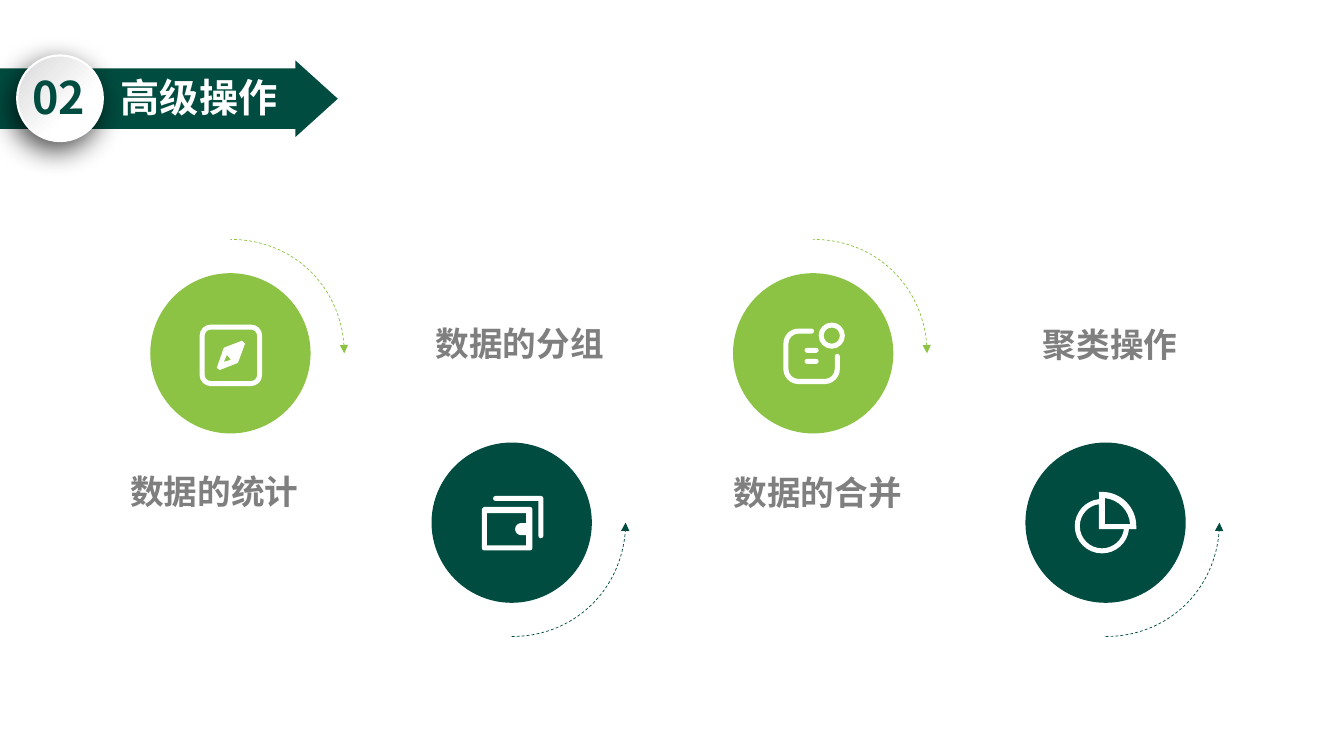
import math

from lxml import etree
from pptx import Presentation
from pptx import util as u
from pptx.dml.color import RGBColor
from pptx.enum import dml, shapes, text
from pptx.oxml import parse_xml
from pptx.oxml.ns import nsdecls, qn

PX = 9144  # EMU in one px, 100 px to the inch
FONT = "Noto Sans CJK SC"
DARK = RGBColor(0x00, 0x4C, 0x40)
LIME = RGBColor(0x8C, 0xC3, 0x44)
GREY = RGBColor(0x7F, 0x7F, 0x7F)
WHITE = RGBColor(0xFF, 0xFF, 0xFF)
STROKE = 5  # thickness of the icon lines
HALF = STROKE / 2
DISC = 159
TRAIL_RADIUS = 113


def add_shape(slide, kind, left, top, width, height, color):
    shape = slide.shapes.add_shape(
        kind, left * PX, top * PX, width * PX, height * PX)
    shape.shadow.inherit = False
    shape.fill.solid()
    shape.fill.fore_color.rgb = color
    shape.line.fill.background()
    return shape


def add_label(slide, left, top, width, height, words, size, color,
              align=text.PP_ALIGN.LEFT, wrap=True):
    box = slide.shapes.add_textbox(
        left * PX, top * PX, width * PX, height * PX)
    box.text_frame.word_wrap = wrap
    paragraph = box.text_frame.paragraphs[0]
    paragraph.alignment = align
    run = paragraph.add_run()
    run.text = words
    run.font.size = u.Pt(size)
    run.font.bold = True
    run.font.name = FONT
    run.font.color.rgb = color
    east_asian = etree.SubElement(run.font._element, qn("a:ea"))
    east_asian.set("typeface", FONT)


# A contour is a list of nodes: one point for a line, three for a curve
def line(*points):
    return [[point] for point in points]


def arc(x, y, radius, start, end):
    """Curves of an arc, cut at the axes; degrees run clockwise."""
    low, high = sorted((start, end))
    cuts = [low, *[a for a in range(-90, 361, 90) if low < a < high], high]
    angles = [math.radians(a) for a in (cuts if start < end else cuts[::-1])]

    def point(angle, pull=0):
        return (x + radius * (math.cos(angle) - pull * math.sin(angle)),
                y + radius * (math.sin(angle) + pull * math.cos(angle)))

    nodes = line(point(angles[0]))
    for a, b in zip(angles, angles[1:]):
        pull = 4 / 3 * math.tan((b - a) / 4)
        nodes.append([point(a, pull), point(b, -pull), point(b)])
    return nodes


def block(left, top, right, bottom, radius):
    """Contour of a rounded rectangle."""
    near_x, far_x = left + radius, right - radius
    near_y, far_y = top + radius, bottom - radius
    return (arc(near_x, near_y, radius, 180, 270)
            + arc(far_x, near_y, radius, 270, 360)
            + arc(far_x, far_y, radius, 0, 90)
            + arc(near_x, far_y, radius, 90, 180))


def disc(x, y, radius):
    return arc(x, y, radius, 0, 360)


def add_outline(slide, left, top, contours, close=True):
    """One freeform; every contour after the first is a hole."""
    builder = None
    for contour in contours:
        points = [((left + x) * PX, (top + y) * PX)
                  for node in contour for x, y in node]
        if builder is None:
            builder = slide.shapes.build_freeform(*points[0], scale=1.0)
        else:
            builder.move_to(*points[0])
        builder.add_line_segments(points[1:], close=close)
    shape = builder.convert_to_shape()
    shape.shadow.inherit = False

    # Join each three steps of a curve into one Bezier segment
    steps = iter(list(shape._element.spPr.iter(qn("a:moveTo"), qn("a:lnTo"))))
    for node in (node for contour in contours for node in contour):
        group = [next(steps) for _ in node]
        if len(group) == 3:
            curve = etree.Element(qn("a:cubicBezTo"))
            group[0].addprevious(curve)
            for step in group:
                curve.append(step[0])
                step.getparent().remove(step)
    return shape


# Icons: lists of parts, measured from the corner of the disc
def compass_icon():
    needle = line((91, 67), (73, 74), (66, 94), (69, 96), (87, 89), (94, 70))
    pivot = line((73, 88), (76, 81), (80, 86))
    frame = [block(49, 51, 111, 112, 11), block(54, 56, 106, 107, 6)]
    return [[needle, pivot], frame]


def note_icon():
    page = (arc(78, 55 + HALF, HALF, -90, 90)
            + arc(65, 70, 10, 270, 180) + arc(65, 95, 10, 180, 90)
            + arc(91, 95, 10, 90, 0)
            + arc(106 - HALF, 80 + HALF, HALF, 180, 360)
            + arc(91, 95, 15, 0, 90) + arc(65, 95, 15, 90, 180)
            + arc(65, 70, 15, 180, 270))
    ring = [disc(98, 62, 13), disc(98, 62, 8)]
    lines = [[block(71, top, 85, top + STROKE, HALF)] for top in (74, 85)]
    return [[page], ring, *lines]


def wallet_icon():
    inside = (line((55, 102), (55, 70), (94, 70), (94, 80))
              + arc(89, 86, 6, 270, 90) + line((94, 92), (94, 102)))
    flap = (arc(61 + HALF, 53 + HALF, HALF, 270, 90)
            + line((111 - STROKE, 53 + STROKE))
            + arc(111 - HALF, 95 - HALF, HALF, 180, 0)
            + arc(111 - HALF, 53 + HALF, HALF, 360, 270))
    return [[block(50, 64, 100, 107, 2), inside], [flap]]


def pie_icon():
    outside = (line((73, 49)) + arc(76, 83, 34, 270, 360)
               + line((110, 86), (103, 86)) + arc(76, 83, 27, 6, 264))
    rest = line((73, 86)) + arc(76, 83, 22, 8, 262)
    slice_hole = line((79, 81)) + arc(76, 83, 28, 276, 356)
    return [[outside, rest, slice_hole]]


def add_header(slide, left, top):
    # Arrow banner
    add_shape(slide, shapes.MSO_SHAPE.RECTANGLE, left, top + 13, 294, 60, DARK)
    tip = add_shape(slide, shapes.MSO_SHAPE.ISOSCELES_TRIANGLE,
                    left + 276, top + 22, 76, 42, DARK)
    tip.rotation = 90
    add_label(slide, left + 110, top + 13, 776, 87, "高级操作", 28, WHITE)

    # Number badge with a round gradient and a soft shadow
    badge = add_shape(slide, shapes.MSO_SHAPE.OVAL,
                      left + 17, top, 85, 85, WHITE)
    badge.line.color.rgb = WHITE
    badge.line.width = u.Pt(1.5)
    properties = badge._element.spPr
    properties.replace(properties.find(qn("a:solidFill")), parse_xml(
        f'<a:gradFill {nsdecls("a")} rotWithShape="1"><a:gsLst>'
        '<a:gs pos="34000"><a:srgbClr val="FFFFFF"/></a:gs>'
        '<a:gs pos="96000"><a:srgbClr val="DBDBDD"/></a:gs></a:gsLst>'
        '<a:path path="circle"><a:fillToRect l="100000" t="100000"/></a:path>'
        '</a:gradFill>'))
    properties.find(qn("a:effectLst")).append(parse_xml(
        f'<a:outerShdw {nsdecls("a")} blurRad="{u.Pt(20)}" dist="{u.Pt(7)}" '
        'dir="7200000" algn="t" rotWithShape="0"><a:srgbClr val="000000">'
        '<a:alpha val="70000"/></a:srgbClr></a:outerShdw>'))
    add_label(slide, left + 22, top + 9, 76, 64, "02", 32, DARK, wrap=False)


def add_topic(slide, left, top, color, icon, sweep, arrow_end, label):
    add_shape(slide, shapes.MSO_SHAPE.OVAL, left, top, DISC, DISC, color)

    # Dashed quarter arc with its arrow on the right of the disc
    curve = arc(DISC / 2, DISC / 2, TRAIL_RADIUS, *sweep)
    trail = add_outline(slide, left, top, [curve], close=False)
    trail.fill.background()
    trail.line.color.rgb = color
    trail.line.width = u.Pt(0.5)
    trail.line.dash_style = dml.MSO_LINE.DASH
    arrow = etree.SubElement(trail.line._get_or_add_ln(), qn(arrow_end))
    arrow.set("type", "triangle")

    for contours in icon:
        part = add_outline(slide, left, top, contours)
        part.fill.solid()
        part.fill.fore_color.rgb = WHITE
        part.line.fill.background()

    words, shift_x, shift_y, width = label
    add_label(slide, left + shift_x, top + shift_y, width, 50, words, 24,
              GREY, align=text.PP_ALIGN.CENTER)


def main():
    presentation = Presentation()
    presentation.slide_width = 1333 * PX
    presentation.slide_height = 750 * PX
    slide = presentation.slides.add_slide(presentation.slide_layouts[6])
    slide.background.fill.solid()
    slide.background.fill.fore_color.rgb = WHITE

    add_header(slide, 0, 55)
    upper, lower = ((0, -90), "a:headEnd"), ((90, 0), "a:tailEnd")
    add_topic(slide, 149, 271, LIME, compass_icon(), *upper,
              ("数据的统计", -32, 191, 191))
    add_topic(slide, 428, 439, DARK, wallet_icon(), *lower,
              ("数据的分组", -40, -124, 255))
    add_topic(slide, 727, 271, LIME, note_icon(), *upper,
              ("数据的合并", -17, 192, 202))
    add_topic(slide, 1017, 439, DARK, pie_icon(), *lower,
              ("聚类操作", 4, -123, 160))
    presentation.save("out.pptx")


if __name__ == "__main__":
    main()
